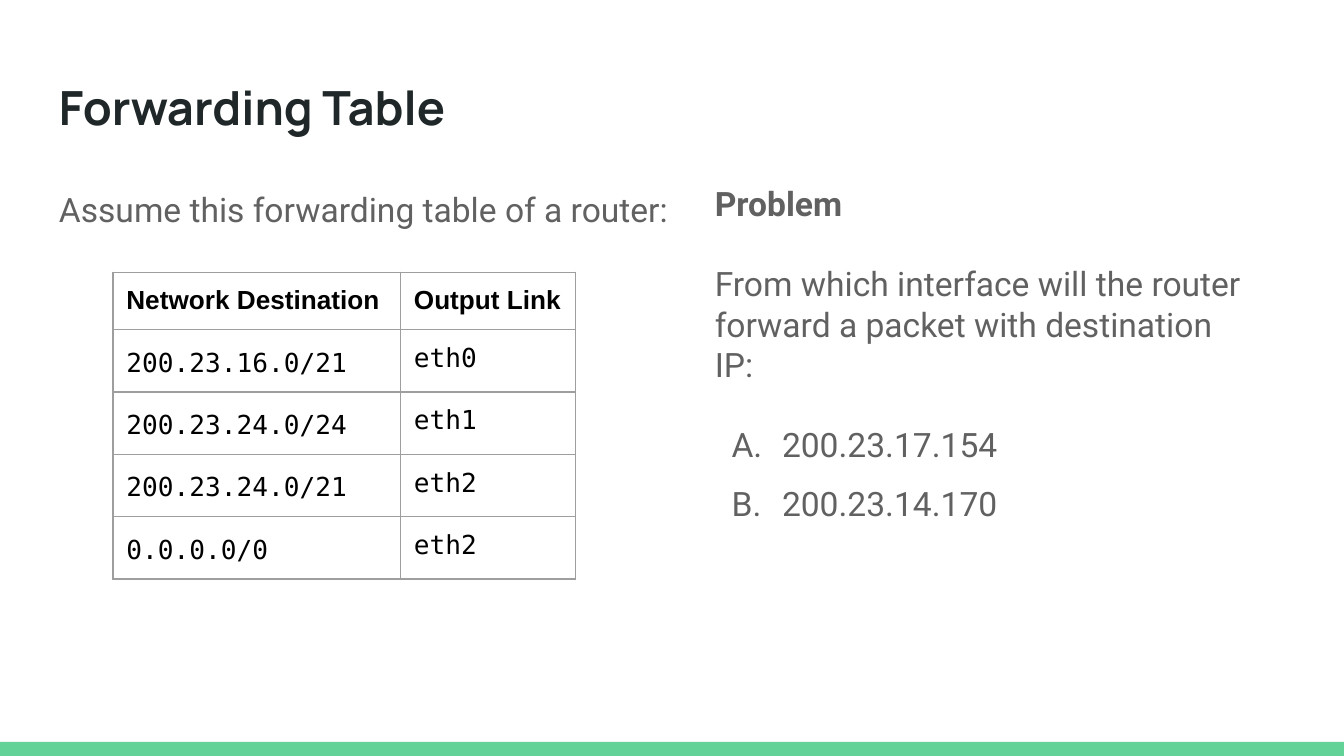
import pptx
import pptx.dml.color
import pptx.enum.shapes
import pptx.oxml
import pptx.oxml.ns
import pptx.util

PX = 4572
INK = pptx.dml.color.RGBColor(0x20, 0x27, 0x29)
GRAY = pptx.dml.color.RGBColor(0x61, 0x61, 0x61)
BLACK = pptx.dml.color.RGBColor(0x00, 0x00, 0x00)
GREEN = pptx.dml.color.RGBColor(0x63, 0xD2, 0x97)
BORDER = pptx.dml.color.RGBColor(0x9E, 0x9E, 0x9E)

ROUTES = [
    ("Network Destination", "Output Link"),
    ("200.23.16.0/21", "eth0"),
    ("200.23.24.0/24", "eth1"),
    ("200.23.24.0/21", "eth2"),
    ("0.0.0.0/0", "eth2"),
]
ADDRESSES = ["200.23.17.154", "200.23.14.170"]


def px(*lengths):
    return [pptx.util.Emu(length * PX) for length in lengths]


def style(paragraph, face, size, color, bold=False):
    paragraph.font.name = face
    paragraph.font.size = pptx.util.Pt(size)
    paragraph.font.color.rgb = color
    paragraph.font.bold = bold


def space(paragraph, before=0, after=0, line=1.0):
    paragraph.space_before = pptx.util.Pt(before)
    paragraph.space_after = pptx.util.Pt(after)
    paragraph.line_spacing = line


def inset(holder, bottom=20):
    (holder.margin_left, holder.margin_top,
     holder.margin_right, holder.margin_bottom) = px(20, 20, 20, bottom)


def add_frame(slide, box):
    frame = slide.shapes.add_textbox(*px(*box)).text_frame
    frame.word_wrap = True
    inset(frame)
    return frame


def letter(paragraph):
    properties = paragraph._p.get_or_add_pPr()
    left, indent = px(100, -75)
    properties.set("marL", str(left))
    properties.set("indent", str(indent))
    namespace = pptx.oxml.ns.nsdecls("a")
    for markup in (
        f'<a:buClr {namespace}><a:srgbClr val="{GRAY}"/></a:buClr>',
        f'<a:buFont {namespace} typeface="Roboto"/>',
        f'<a:buAutoNum {namespace} type="alphaUcPeriod"/>',
    ):
        properties.insert_element_before(
            pptx.oxml.parse_xml(markup), "a:tabLst", "a:defRPr", "a:extLst")


def outline(cell):
    properties = cell._tc.get_or_add_tcPr()
    for side in ("lnL", "lnR", "lnT", "lnB"):
        properties.append(pptx.oxml.parse_xml(
            f'<a:{side} {pptx.oxml.ns.nsdecls("a")} w="{pptx.util.Pt(0.75)}">'
            f'<a:solidFill><a:srgbClr val="{BORDER}"/></a:solidFill></a:{side}>'))
    cell.fill.background()


def add_footer_band(slide, box):
    band = slide.shapes.add_shape(
        pptx.enum.shapes.MSO_SHAPE.RECTANGLE, *px(*box))
    band.shadow.inherit = False
    band.fill.solid()
    band.fill.fore_color.rgb = GREEN
    band.line.fill.background()


def add_heading(slide, box):
    heading = add_frame(slide, box).paragraphs[0]
    heading.text = "Forwarding Table"
    style(heading, "Manrope", 25.2, INK, bold=True)


def add_assumption(slide, box):
    assumption = add_frame(slide, box).paragraphs[0]
    assumption.text = "Assume this forwarding table of a router:"
    style(assumption, "Roboto", 18, GRAY)
    space(assumption, after=12, line=1.15)


def add_routes(slide, box):
    routes = slide.shapes.add_table(len(ROUTES), 2, *px(*box)).table
    routes.horz_banding = False
    for column, width in zip(routes.columns, px(428, 260)):
        column.width = width
    for row_index, entries in enumerate(ROUTES):
        routes.rows[row_index].height = px(84)[0]
        is_header = row_index == 0
        for column_index, entry in enumerate(entries):
            cell = routes.cell(row_index, column_index)
            outline(cell)
            inset(cell, bottom=19)
            label = cell.text_frame.paragraphs[0]
            label.text = entry
            face = "Arial" if is_header else "DejaVu Sans Mono"
            style(label, face, 14, BLACK, bold=is_header)
            if column_index == 0 and not is_header:
                space(label, before=12, after=12, line=1.15)


def add_problem(slide, box):
    frame = add_frame(slide, box)
    problem = frame.paragraphs[0]
    problem.text = "Problem"
    style(problem, "Roboto", 18, GRAY, bold=True)

    question = frame.add_paragraph()
    question.text = ("From which interface will the router forward "
                     "a packet with destination IP:")
    style(question, "Roboto", 18, GRAY)
    space(question, before=21.5)

    for address, gap in zip(ADDRESSES, (21.5, 10)):
        choice = frame.add_paragraph()
        choice.text = address
        style(choice, "Roboto", 18, GRAY)
        space(choice, before=gap)
        letter(choice)


def main():
    deck = pptx.Presentation()
    deck.slide_width, deck.slide_height = px(2000, 1125)
    slide = deck.slides.add_slide(deck.slide_layouts[6])
    add_footer_band(slide, (0, 1104, 2000, 21))
    add_heading(slide, (68, 97, 1864, 126))
    add_assumption(slide, (68, 252, 1016, 152))
    add_routes(slide, (168, 405, 688, 420))
    add_problem(slide, (1044, 252, 844, 616))
    deck.save("out.pptx")


if __name__ == "__main__":
    main()
